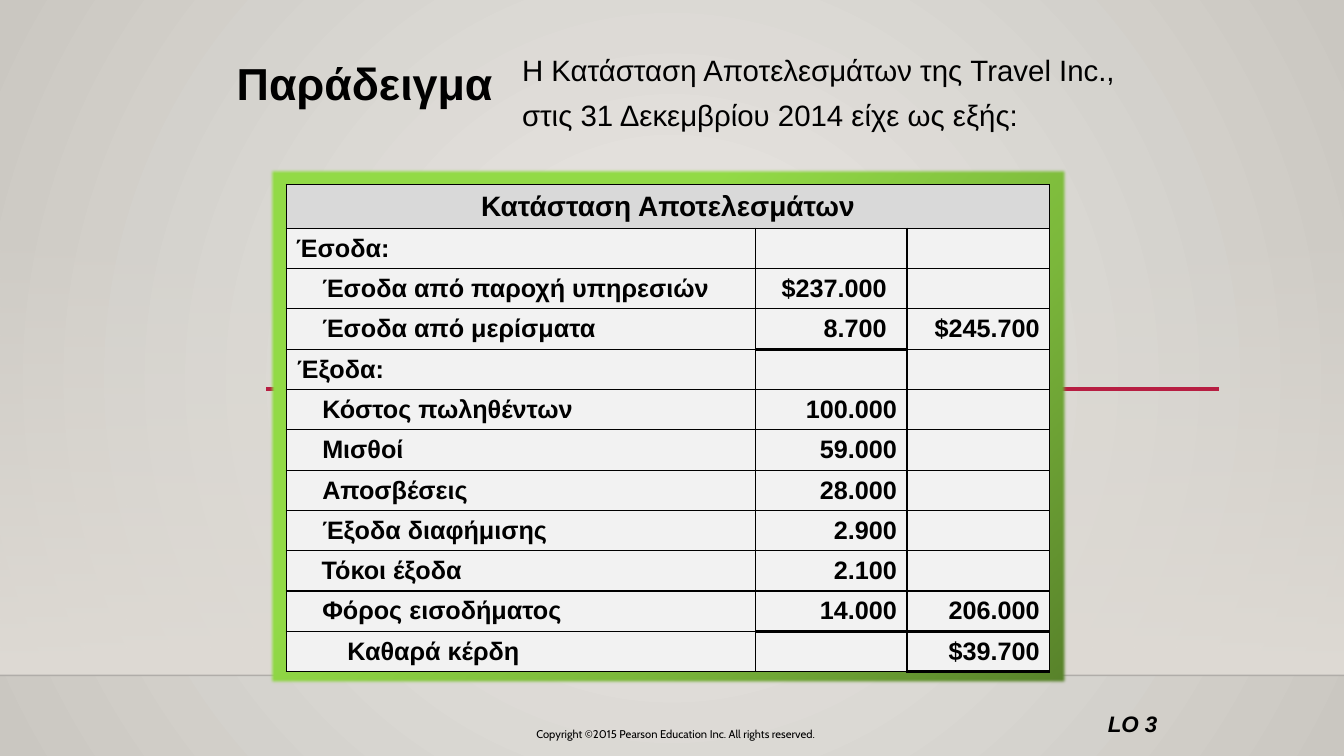
from pptx import Presentation
from pptx import util as u
from pptx.dml.color import RGBColor
from pptx.enum import shapes, text
from pptx.oxml import parse_xml
from pptx.oxml.ns import nsdecls, qn

Pt = u.Pt
LEFT, CENTER, RIGHT = text.PP_ALIGN.LEFT, text.PP_ALIGN.CENTER, text.PP_ALIGN.RIGHT

# Label, detail amount, total amount, label indent
ROWS = [
    ("Έσοδα:", "", "", 0),
    ("Έσοδα από παροχή υπηρεσιών", "$237.000", "", 18.6),
    ("Έσοδα από μερίσματα", "8.700", "$245.700", 18.6),
    ("Έξοδα:", "", "", 0.6),
    ("Κόστος πωληθέντων", "100.000", "", 18.6),
    ("Μισθοί", "59.000", "", 18.6),
    ("Αποσβέσεις", "28.000", "", 18.6),
    ("Έξοδα διαφήμισης", "2.900", "", 18.6),
    ("Τόκοι έξοδα", "2.100", "", 18.2),
    ("Φόρος εισοδήματος", "14.000", "206.000", 18.6),
    ("Καθαρά κέρδη", "", "$39.700", 36.6),
]
# Cells (row, column) closed by a thick rule below
SUM_RULES = {(3, 1), (10, 1), (10, 2), (11, 2)}


def rgb(value):
    return RGBColor.from_string(value)


def set_all(obj, **values):
    for name, value in values.items():
        setattr(obj, name, value)


def gradient(fill, root, stops, direction):
    """Replace the gradient found under root; a stop is (position, colour, alpha)."""
    fill.gradient()
    old = root.find(".//" + qn("a:gradFill"))
    marks = "".join(
        f'<a:gs pos="{pos * 1000}"><a:srgbClr val="{color}">'
        f'<a:alpha val="{alpha * 1000}"/></a:srgbClr></a:gs>'
        for pos, color, alpha in stops)
    new = parse_xml(f'<a:gradFill {nsdecls("a")} rotWithShape="1">'
                    f'<a:gsLst>{marks}</a:gsLst>{direction}</a:gradFill>')
    old.getparent().replace(old, new)


def linear(angle):
    return f'<a:lin ang="{angle * 60000}" scaled="0"/>'


def add_rect(slide, box, stops, angle):
    sp = slide.shapes.add_shape(shapes.MSO_SHAPE.RECTANGLE, *map(Pt, box))
    sp.shadow.inherit = False
    sp.line.fill.background()
    gradient(sp.fill, sp.element.spPr, stops, linear(angle))
    return sp


def add_rule(slide, x1, x2, y, color, width, alpha=100):
    line = slide.shapes.add_connector(
        shapes.MSO_CONNECTOR.STRAIGHT, Pt(x1), Pt(y), Pt(x2), Pt(y))
    line.line.width = Pt(width)
    line.line.color.rgb = rgb(color)
    spPr = line.element.spPr
    spPr.find(".//" + qn("a:srgbClr")).append(
        parse_xml(f'<a:alpha {nsdecls("a")} val="{alpha * 1000}"/>'))
    spPr.append(parse_xml(f'<a:effectLst {nsdecls("a")}/>'))


def write(p, words, align, **font):
    p.alignment = align
    r = p.add_run()
    r.text = words
    r.font.color.rgb = rgb("000000")
    set_all(r.font, **font)


def add_text(slide, box, words, size, align=LEFT, inset=3.6, spacing=None,
             name="Arial", **font):
    tf = slide.shapes.add_textbox(*map(Pt, box)).text_frame
    set_all(tf, word_wrap=True, margin_left=Pt(7.2), margin_right=Pt(7.2),
            margin_top=Pt(inset), margin_bottom=Pt(inset))
    p = tf.paragraphs[0]
    p.line_spacing = spacing
    write(p, words, align, name=name, size=Pt(size), **font)


def add_backdrop(slide, width, height):
    floor = 482.4
    gradient(slide.background.fill, slide.element,
             [(0, "ECEAE7", 100), (100, "CAC7C1", 100)],
             '<a:path path="circle"><a:fillToRect l="50000" t="50000" '
             'r="50000" b="50000"/></a:path>')
    add_rect(slide, (0, 159.1, width, floor - 159.1),
             [(0, "DFDBD5", 0), (100, "DFDBD5", 100)], 90)
    add_rule(slide, 0, width, floor, "000001", 1, 20)
    add_rule(slide, 190.1, 870.5, 277.9, "B71E42", 2.5)


def add_heading(slide, x, y):
    add_text(slide, (x, y + 12, 203.8, 46), "Παράδειγμα", 32, bold=True)
    add_text(slide, (x + 203.8, y, 438, 77.8),
             "Η Κατάσταση Αποτελεσμάτων της Travel Inc., "
             "στις 31 Δεκεμβρίου 2014 είχε ως εξής:",
             21, inset=7.2, spacing=1.25)


def style_cell(cell, row, col, color):
    tcPr = cell._tc.get_or_add_tcPr()
    thick = {"T": (row - 1, col) in SUM_RULES, "B": (row, col) in SUM_RULES}
    for side in "LRTB":
        width = Pt(2.25 if thick.get(side) else 1)
        tcPr.append(parse_xml(
            f'<a:ln{side} {nsdecls("a")} w="{width}"><a:solidFill>'
            f'<a:srgbClr val="000000"/></a:solidFill></a:ln{side}>'))
    cell.fill.solid()
    cell.fill.fore_color.rgb = rgb(color)
    set_all(cell, vertical_anchor=text.MSO_ANCHOR.MIDDLE,
            margin_top=Pt(2), margin_bottom=Pt(2))


def add_statement(slide, x, y, w, h):
    # Green frame with soft edges
    frame = add_rect(slide, (x, y, w, h),
                     [(0, "57812A", 100), (33, "7BB73B", 100), (65, "92DA46", 100)], 225)
    frame.element.spPr.find(qn("a:effectLst")).append(
        parse_xml(f'<a:softEdge {nsdecls("a")} rad="{Pt(2.5)}"/>'))

    # Table grid
    widths = (335.4, 108, 102)
    heights = [31.2] + [28.8] * len(ROWS)
    table = slide.shapes.add_table(
        len(heights), len(widths), Pt(x + 12.2), Pt(y + 11.6),
        Pt(sum(widths)), Pt(sum(heights))).table
    set_all(table, first_row=False, horz_banding=False)
    for column, width in zip(table.columns, widths):
        column.width = Pt(width)
    for row, height in zip(table.rows, heights):
        row.height = Pt(height)

    # Heading row
    for col in range(len(widths)):
        style_cell(table.cell(0, col), 0, col, "D9D9D9")
    table.cell(0, 0).merge(table.cell(0, 2))
    write(table.cell(0, 0).text_frame.paragraphs[0], "Κατάσταση Αποτελεσμάτων",
          CENTER, name="Arial", size=Pt(20), bold=True)

    # Amount rows
    for row, (*values, indent) in enumerate(ROWS, 1):
        for col, value in enumerate(values):
            cell = table.cell(row, col)
            style_cell(cell, row, col, "F2F2F2")
            if not value:
                continue
            p = cell.text_frame.paragraphs[0]
            if col == 0:
                set_all_indent = {"marL": Pt(indent), "indent": 0}
                for name, amount in set_all_indent.items():
                    p._p.get_or_add_pPr().set(name, str(int(amount)))
            if col == 1 and row < 4:
                cell.margin_right = Pt(14.4)
            write(p, value, RIGHT if col else LEFT,
                  name="Arial", size=Pt(18), bold=True)


def add_footer(slide, x, y):
    add_text(slide, (x + 462.2, y, 59.8, 26.6), "LO 3", 16, RIGHT,
             bold=True, italic=True)
    add_text(slide, (x, y + 12.2, 342, 18),
             "Copyright ©2015 Pearson Education Inc. All rights reserved.",
             8, CENTER, name="Cabin")


def main():
    prs = Presentation()
    set_all(prs, slide_width=Pt(960), slide_height=Pt(540))
    slide = prs.slides.add_slide(prs.slide_layouts[6])
    add_backdrop(slide, 960, 540)
    add_heading(slide, 162, 24)
    add_statement(slide, 192.2, 120.2, 570.2, 368.6)
    add_footer(slide, 311.8, 504)
    prs.save("out.pptx")


if __name__ == "__main__":
    main()
